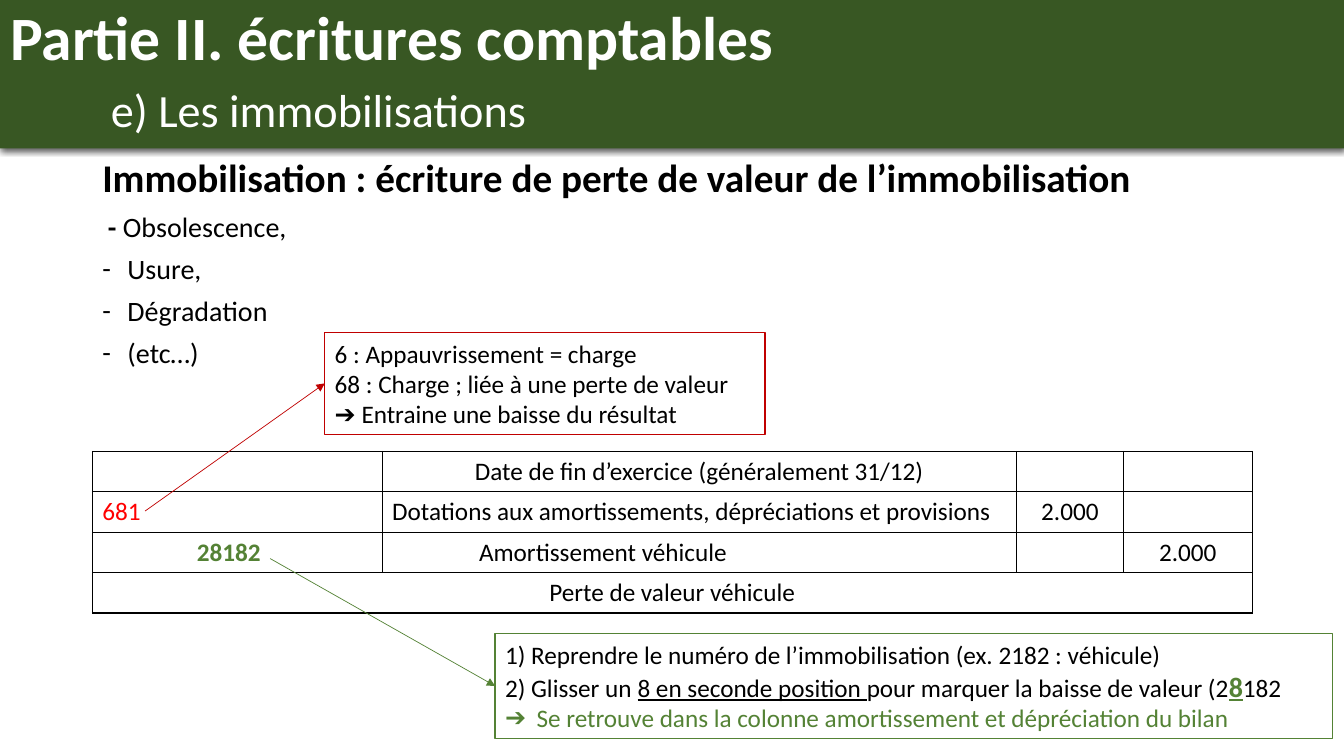
from dataclasses import dataclass

from lxml.etree import SubElement
from pptx import Presentation
from pptx.dml.color import RGBColor
from pptx.enum.shapes import MSO_CONNECTOR, MSO_SHAPE
from pptx.enum.text import MSO_ANCHOR, MSO_AUTO_SIZE, PP_ALIGN
from pptx.oxml.ns import qn
from pptx.util import Pt


@dataclass(frozen=True)
class Theme:
    font: str = "Calibri"
    banner: str = "385723"
    white: str = "FFFFFF"
    black: str = "000000"
    red: str = "FF0000"
    dark_red: str = "C00000"
    green: str = "548235"
    title: int = 44
    subtitle: int = 33
    heading: int = 28
    item: int = 20
    body: int = 18


THEME = Theme()

# A paragraph is (runs, format); a run is (text, format).
TITLE = [([("Partie II. écritures comptables", {"bold": True}),
           ("\n", {}),
           ("\t", {"bold": True}),
           ("e) Les immobilisations", {"size": THEME.subtitle, "bold": False})],
          {"line_spacing": 0.9, "alignment": PP_ALIGN.LEFT, "tab": 72})]

DASH = {"space_before": Pt(6), "bullet": "-", "indent": 18}
CAUSES = [
    ([("Immobilisation : écriture de perte de valeur de l’immobilisation",
       {"size": THEME.heading, "bold": True})],
     {"line_spacing": 0.9, "space_before": Pt(10)}),
    ([(" ", {"size": THEME.body, "bold": True}), ("- ", {"bold": True}), ("Obsolescence,", {})],
     {"space_before": Pt(6)}),
    ([("Usure,", {})], DASH),
    ([("Dégradation", {})], DASH),
    ([("(etc…)", {})], DASH),
]

CENTER = {"alignment": PP_ALIGN.CENTER}
# (row, column, last column, text, run format, paragraph format)
ENTRIES = [
    (0, 0, 1, "", {}, {}),
    (0, 2, 3, "Date de fin d’exercice (généralement 31/12)", {}, CENTER),
    (1, 0, 1, "681", {"color": THEME.red}, {}),
    (1, 2, 3, "Dotations aux amortissements, dépréciations et provisions", {}, {}),
    (1, 4, 4, "2.000", {}, CENTER),
    (2, 1, 1, "28182", {"color": THEME.green, "bold": True}, {}),
    (2, 3, 3, "Amortissement véhicule", {}, {}),
    (2, 5, 5, "2.000", {}, CENTER),
    (3, 0, 5, "Perte de valeur véhicule", {}, CENTER),
]
COLUMN_WIDTHS = [67.5, 139.5, 62, 391, 76.5, 92]
ROW_COUNT, ROW_HEIGHT = 4, 28.8
OPEN_SIDES = {(2, 0): "R", (2, 1): "L", (2, 2): "R", (2, 3): "L"}

# (box, line colour, arrow start, paragraphs)
NOTES = [
    ((232, 237.5, 314.5, 72.7), THEME.dark_red, (103.7, 365), [
        ([("6 : Appauvrissement = charge", {})], {}),
        ([("68 : Charge ; liée à une perte de valeur", {})], {}),
        ([("➔ Entraine une baisse du résultat", {})], {}),
    ]),
    ((353.7, 452.5, 598, 75), THEME.green, (193, 399), [
        ([("1) Reprendre le numéro de l’immobilisation (ex. 2182 : véhicule)", {})], {}),
        ([("2) Glisser un ", {}),
          ("8 en seconde position ", {"underline": True}),
          ("pour marquer la baisse de valeur (2", {}),
          ("8", {"size": THEME.item, "color": THEME.green, "bold": True, "underline": True}),
          ("182", {})], {}),
        ([("Se retrouve dans la colonne amortissement et dépréciation du bilan",
           {"color": THEME.green})], {"bullet": "➔", "indent": 22.5}),
    ]),
]


def rgb(color):
    return RGBColor.from_string(color)


def format_paragraph(para, style):
    style = dict(style)
    bullet, indent, tab = (style.pop(key, None) for key in ("bullet", "indent", "tab"))
    for name, value in style.items():
        setattr(para, name, value)
    properties = para._p.get_or_add_pPr()
    if bullet:
        properties.set("marL", str(Pt(indent)))
        properties.set("indent", str(-Pt(indent)))
        SubElement(properties, qn("a:buFont"), typeface=THEME.font)
        SubElement(properties, qn("a:buChar"), char=bullet)
    if tab:
        tabs = SubElement(properties, qn("a:tabLst"))
        SubElement(tabs, qn("a:tab"), pos=str(Pt(tab)), algn="l")


def write(frame, paragraphs, size, color=THEME.black):
    frame.word_wrap = True
    for index, (runs, style) in enumerate(paragraphs):
        para = frame.paragraphs[0] if index == 0 else frame.add_paragraph()
        format_paragraph(para, {"alignment": PP_ALIGN.LEFT, **style})
        for text, look in runs:
            if text == "\n":
                para.add_line_break()
                continue
            span = para.add_run()
            span.text = text
            look = {"size": size, "color": color, "bold": False, "name": THEME.font, **look}
            span.font.color.rgb = rgb(look.pop("color"))
            look["size"] = Pt(look["size"])
            for name, value in look.items():
                setattr(span.font, name, value)


def add_banner(page, width):
    banner = page.shapes.title
    banner.left, banner.top, banner.width, banner.height = 0, 0, width, Pt(106)
    banner.fill.solid()
    banner.fill.fore_color.rgb = rgb(THEME.banner)
    effects = SubElement(banner._element.spPr, qn("a:effectLst"))
    shadow = SubElement(effects, qn("a:outerShdw"), blurRad=str(Pt(4.5)), dist=str(Pt(1.5)),
                        dir="5400000", algn="t", rotWithShape="0")
    shade = SubElement(shadow, qn("a:srgbClr"), val=THEME.black)
    SubElement(shade, qn("a:alpha"), val="63000")
    banner.text_frame.auto_size = MSO_AUTO_SIZE.NONE
    banner.text_frame.vertical_anchor = MSO_ANCHOR.MIDDLE
    write(banner.text_frame, TITLE, THEME.title, THEME.white)


def draw_borders(cell, open_side):
    properties = cell._tc.get_or_add_tcPr()
    for side in "LRTB":
        line = SubElement(properties, qn(f"a:ln{side}"), w=str(Pt(1)))
        if side == open_side:
            SubElement(line, qn("a:noFill"))
        else:
            ink = SubElement(line, qn("a:solidFill"))
            SubElement(ink, qn("a:srgbClr"), val=THEME.black)


def add_journal(page):
    table = page.shapes.add_table(ROW_COUNT, len(COLUMN_WIDTHS), Pt(66), Pt(322.5),
                                  Pt(sum(COLUMN_WIDTHS)), Pt(ROW_COUNT * ROW_HEIGHT)).table
    table.first_row = table.horz_banding = False
    for column, width in zip(table.columns, COLUMN_WIDTHS):
        column.width = Pt(width)
    for row in range(ROW_COUNT):
        for column in range(len(COLUMN_WIDTHS)):
            cell = table.cell(row, column)
            draw_borders(cell, OPEN_SIDES.get((row, column)))
            cell.fill.background()
    for row, first, last, text, look, style in ENTRIES:
        cell = table.cell(row, first)
        if last > first:
            cell.merge(table.cell(row, last))
        if text:
            write(cell.text_frame, [([(text, look)], style)], THEME.body)


def add_note(page, place, color, start, paragraphs):
    """Add a framed note and the arrow that leads to its left side."""
    box = page.shapes.add_shape(MSO_SHAPE.RECTANGLE, *map(Pt, place))
    box.shadow.inherit = False
    box.fill.solid()
    box.fill.fore_color.rgb = rgb(THEME.white)
    box.line.color.rgb = rgb(color)
    box.line.width = Pt(1)
    write(box.text_frame, paragraphs, THEME.body)
    box.text_frame.auto_size = MSO_AUTO_SIZE.SHAPE_TO_FIT_TEXT

    left, top, _, height = place
    arrow = page.shapes.add_connector(MSO_CONNECTOR.STRAIGHT, *map(Pt, start),
                                      Pt(left), Pt(top + height / 2))
    arrow.end_connect(box, 1)
    arrow.line.color.rgb = rgb(color)
    arrow.line.width = Pt(0.5)
    SubElement(arrow.line._get_or_add_ln(), qn("a:tailEnd"), type="triangle")
    SubElement(arrow._element.spPr, qn("a:effectLst"))


def main():
    deck = Presentation()
    deck.slide_width, deck.slide_height = Pt(960), Pt(540)
    page = deck.slides.add_slide(deck.slide_layouts.get_by_name("Title Only"))
    add_banner(page, deck.slide_width)
    causes = page.shapes.add_textbox(Pt(66), Pt(110), Pt(828), Pt(343))
    write(causes.text_frame, CAUSES, THEME.item)
    add_journal(page)
    for note in NOTES:
        add_note(page, *note)
    deck.save("out.pptx")


if __name__ == "__main__":
    main()
